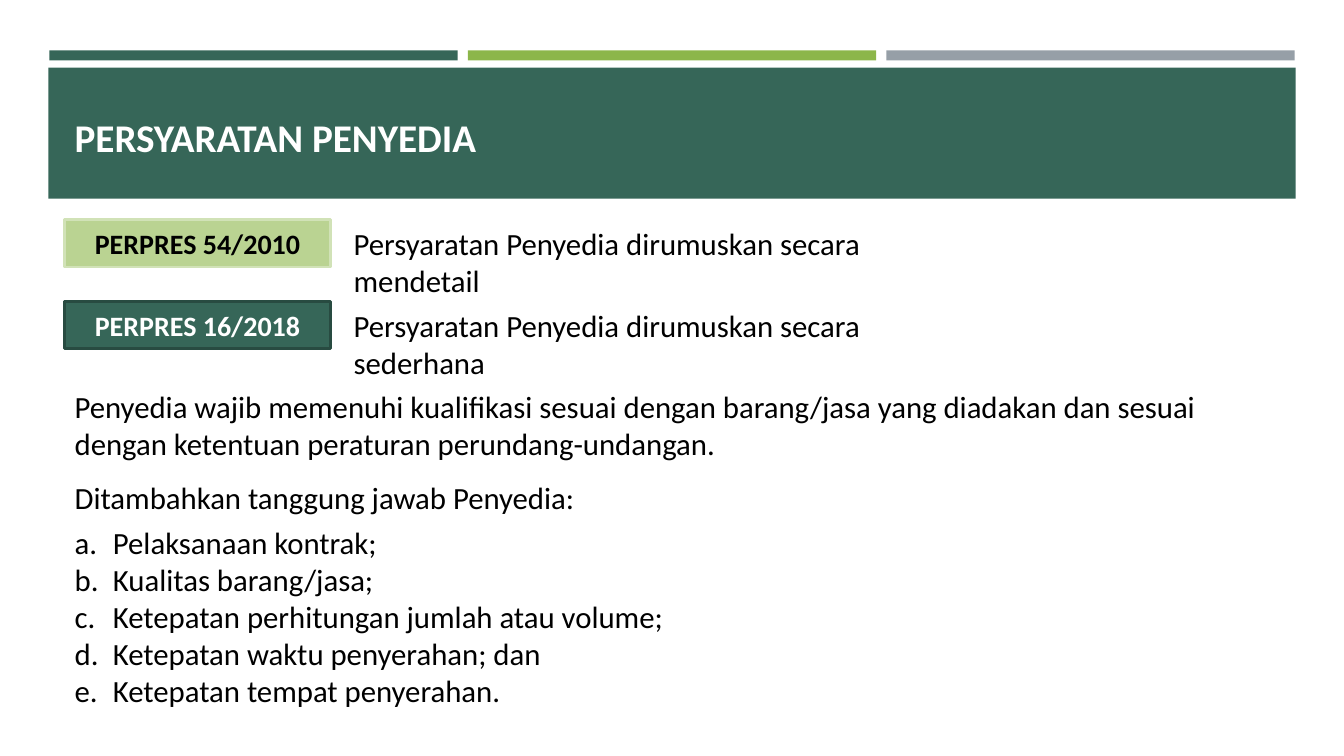
from pptx import Presentation
from pptx.dml.color import RGBColor
from pptx.enum.shapes import MSO_SHAPE
from pptx.enum.text import MSO_ANCHOR, MSO_AUTO_SIZE, PP_ALIGN
from pptx.oxml.ns import qn
from pptx.util import Inches, Pt
from lxml import etree

RECTANGLE = MSO_SHAPE.RECTANGLE
LEFT, CENTER = PP_ALIGN.LEFT, PP_ALIGN.CENTER
MIDDLE, BOTTOM = MSO_ANCHOR.MIDDLE, MSO_ANCHOR.BOTTOM
NO_FIT = MSO_AUTO_SIZE.NONE

GREEN, LIME, GRAY = "366658", "8CB64A", "969FA7"
BLACK, WHITE = "000000", "FFFFFF"
MARGIN, CONTENT_WIDTH = 0.64, 12.06
BAR_LEFT, BAR_WIDTH, BAR_GAP = 0.49, 4.05, 0.1
RULE_TOP, RULE_PITCH, RULE_HEIGHT = 2.18, 0.81, 0.47
LIST_INDENT = Inches(0.38)

deck = Presentation()
deck.slide_width, deck.slide_height = Inches(13.33), Inches(7.5)
page = deck.slides.add_slide(deck.slide_layouts[1])


def add_block(left, top, width, height, fill, line=None):
    block = page.shapes.add_shape(
        RECTANGLE, Inches(left), Inches(top), Inches(width), Inches(height))
    block.shadow.inherit = False
    block.fill.solid()
    block.fill.fore_color.rgb = RGBColor.from_string(fill)
    if line:
        block.line.color.rgb = RGBColor.from_string(line)
        block.line.width = Pt(1.75)
    else:
        block.line.fill.background()
    return block


def write(para, text, size, color, bold=False, align=LEFT):
    para.text = text
    para.alignment = align
    look = {"name": "Calibri", "size": Pt(size), "bold": bold}
    for name, value in look.items():
        setattr(para.font, name, value)
    para.font.color.rgb = RGBColor.from_string(color)


# Header band
for column, color in enumerate([GREEN, LIME, GRAY]):
    add_block(BAR_LEFT + column * (BAR_WIDTH + BAR_GAP), 0.5, BAR_WIDTH, 0.1, color)
band = add_block(0.48, 0.67, 12.37, 1.3, GREEN)

title, body = page.shapes.title, page.placeholders[1]
for holder, top, height in [(title, 0.77, 0.87), (body, 3.8, 3.32)]:
    holder.left, holder.top = Inches(MARGIN), Inches(top)
    holder.width, holder.height = Inches(CONTENT_WIDTH), Inches(height)
    holder.text_frame.auto_size = NO_FIT
    band.element.addnext(holder.element)
title.text_frame.vertical_anchor = BOTTOM
write(title.text_frame.paragraphs[0], "PERSYARATAN PENYEDIA", 28, WHITE, bold=True)

# The two regulations and how each one words the requirements
regulations = [
    ("PERPRES 54/2010", "Persyaratan Penyedia dirumuskan secara mendetail",
     "BAD392", "D1E2B7", BLACK),
    ("PERPRES 16/2018", "Persyaratan Penyedia dirumuskan secara sederhana",
     GREEN, "284B41", WHITE),
]
for row, (label, summary, fill, line, color) in enumerate(regulations):
    top = RULE_TOP + row * RULE_PITCH
    tag = add_block(MARGIN, top, 2.64, RULE_HEIGHT, fill, line)
    tag.text_frame.vertical_anchor = MIDDLE
    write(tag.text_frame.paragraphs[0], label, 20, color, bold=True, align=CENTER)
    box = page.shapes.add_textbox(
        Inches(3.41), Inches(top), Inches(6.4), Inches(RULE_HEIGHT))
    box.text_frame.word_wrap = True
    write(box.text_frame.paragraphs[0], summary, 22, BLACK)

# Provider duties
statements = [
    "Penyedia wajib memenuhi kualifikasi sesuai dengan barang/jasa yang diadakan "
    "dan sesuai dengan ketentuan peraturan perundang-undangan.",
    "Ditambahkan tanggung jawab Penyedia:",
]
duties = [
    "Pelaksanaan kontrak;",
    "Kualitas barang/jasa;",
    "Ketepatan perhitungan jumlah atau volume;",
    "Ketepatan waktu penyerahan; dan",
    "Ketepatan tempat penyerahan.",
]
frame = body.text_frame
for index, text in enumerate(statements + duties):
    para = frame.add_paragraph() if index else frame.paragraphs[0]
    is_duty = index >= len(statements)
    indent = LIST_INDENT if is_duty else 0
    props = para._p.get_or_add_pPr()
    props.set("marL", str(indent))
    props.set("indent", str(-indent))
    if is_duty:
        etree.SubElement(props, qn("a:buFont"), typeface="+mj-lt")
        etree.SubElement(props, qn("a:buAutoNum"), type="alphaLcPeriod")
    else:
        etree.SubElement(props, qn("a:buNone"))
    para.space_before = Pt(6 if 0 < index < len(statements) else 0)
    para.space_after = Pt(0 if is_duty else 6)
    write(para, text, 22, BLACK)

deck.save("out.pptx")
